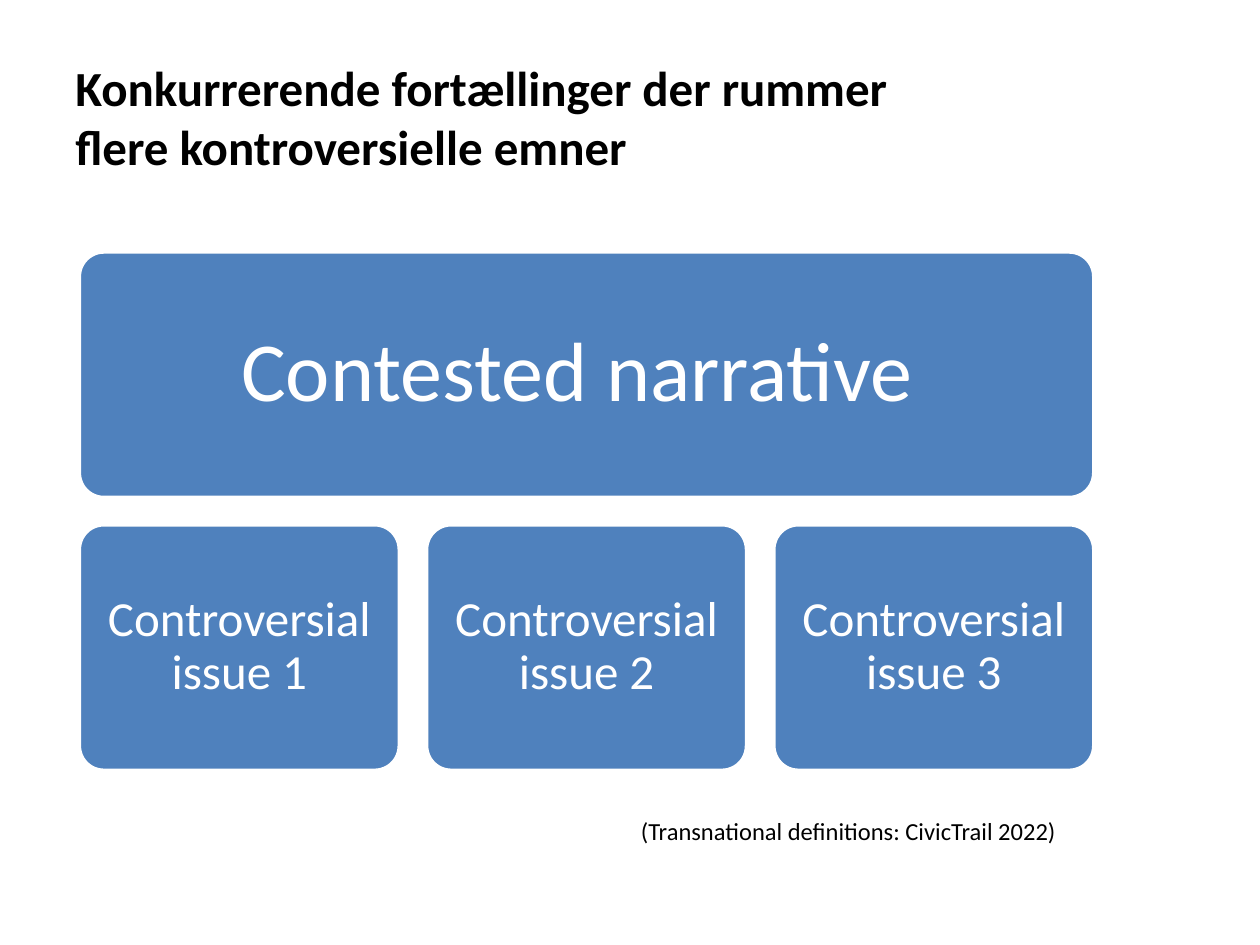
from dataclasses import dataclass

from pptx import Presentation
from pptx.dml.color import RGBColor
from pptx.enum.shapes import MSO_SHAPE as Preset
from pptx.enum.text import MSO_ANCHOR as Anchor, MSO_AUTO_SIZE as AutoSize, PP_ALIGN as Align
from pptx.util import Cm, Pt


@dataclass(frozen=True)
class Theme:
    font: str = "Calibri"
    ink: RGBColor = RGBColor(0x00, 0x00, 0x00)
    paper: RGBColor = RGBColor(0xFF, 0xFF, 0xFF)
    block: RGBColor = RGBColor(0x4F, 0x81, 0xBD)
    title_size: int = 28
    narrative_size: int = 48
    issue_size: int = 28
    source_size: int = 14
    outline: int = 2


@dataclass(frozen=True)
class Block:
    text: str
    left: float
    top: float
    width: float
    size: int
    inset: float


THEME = Theme()

# Block grid, in centimetres
LEFT, TOP, WIDTH, HEIGHT, GAP = 1.6, 5.08, 20.45, 4.95, 0.55
ISSUE_COUNT = 3
ISSUE_WIDTH = (WIDTH - (ISSUE_COUNT - 1) * GAP) / ISSUE_COUNT


def write(frame, text, *, size, color=THEME.ink, bold=False, align=Align.LEFT,
          anchor=Anchor.TOP, wrap=True, spacing=None):
    """Fill a text frame with one formatted paragraph."""
    frame.word_wrap = wrap
    frame.vertical_anchor = anchor
    paragraph = frame.paragraphs[0]
    paragraph.text = text
    paragraph.alignment = align
    paragraph.line_spacing = spacing
    for run in paragraph.runs:
        run.font.name = THEME.font
        run.font.size = Pt(size)
        run.font.bold = bold
        run.font.color.rgb = color


def draw_block(slide, block: Block) -> None:
    box = slide.shapes.add_shape(Preset.ROUNDED_RECTANGLE, Cm(block.left), Cm(block.top),
                                 Cm(block.width), Cm(HEIGHT))
    box.adjustments[0] = 0.1
    box.shadow.inherit = False
    box.fill.solid()
    box.fill.fore_color.rgb = THEME.block
    box.line.color.rgb = THEME.paper
    box.line.width = Pt(THEME.outline)
    frame = box.text_frame
    frame.margin_left = frame.margin_right = Cm(block.inset)
    frame.margin_top = frame.margin_bottom = Cm(block.inset)
    write(frame, block.text, size=block.size, color=THEME.paper, align=Align.CENTER,
          anchor=Anchor.MIDDLE, spacing=0.9)


def main() -> None:
    deck = Presentation()
    deck.slide_width, deck.slide_height = Cm(25.4), Cm(19.05)
    slide = deck.slides.add_slide(deck.slide_layouts[6])

    # Title
    title = slide.shapes.add_textbox(Cm(1.27), Cm(0.76), Cm(22.86), Cm(3.18))
    write(title.text_frame, "Konkurrerende fortællinger der rummer\nflere kontroversielle emner",
          size=THEME.title_size, bold=True, anchor=Anchor.MIDDLE)

    # Narrative above its issues
    narrative = Block("Contested narrative ", LEFT, TOP, WIDTH, THEME.narrative_size, 0.5)
    issues = [
        Block(f"Controversial issue {i + 1}", LEFT + i * (ISSUE_WIDTH + GAP),
              TOP + HEIGHT + GAP, ISSUE_WIDTH, THEME.issue_size, 0.3)
        for i in range(ISSUE_COUNT)
    ]
    for block in [narrative, *issues]:
        draw_block(slide, block)

    # Source of the definitions
    source = slide.shapes.add_textbox(Cm(12.67), Cm(16.33), Cm(9.4), Cm(0.86))
    write(source.text_frame, "(Transnational definitions: CivicTrail 2022)",
          size=THEME.source_size, wrap=False)
    source.text_frame.auto_size = AutoSize.SHAPE_TO_FIT_TEXT

    deck.save("out.pptx")


if __name__ == "__main__":
    main()
